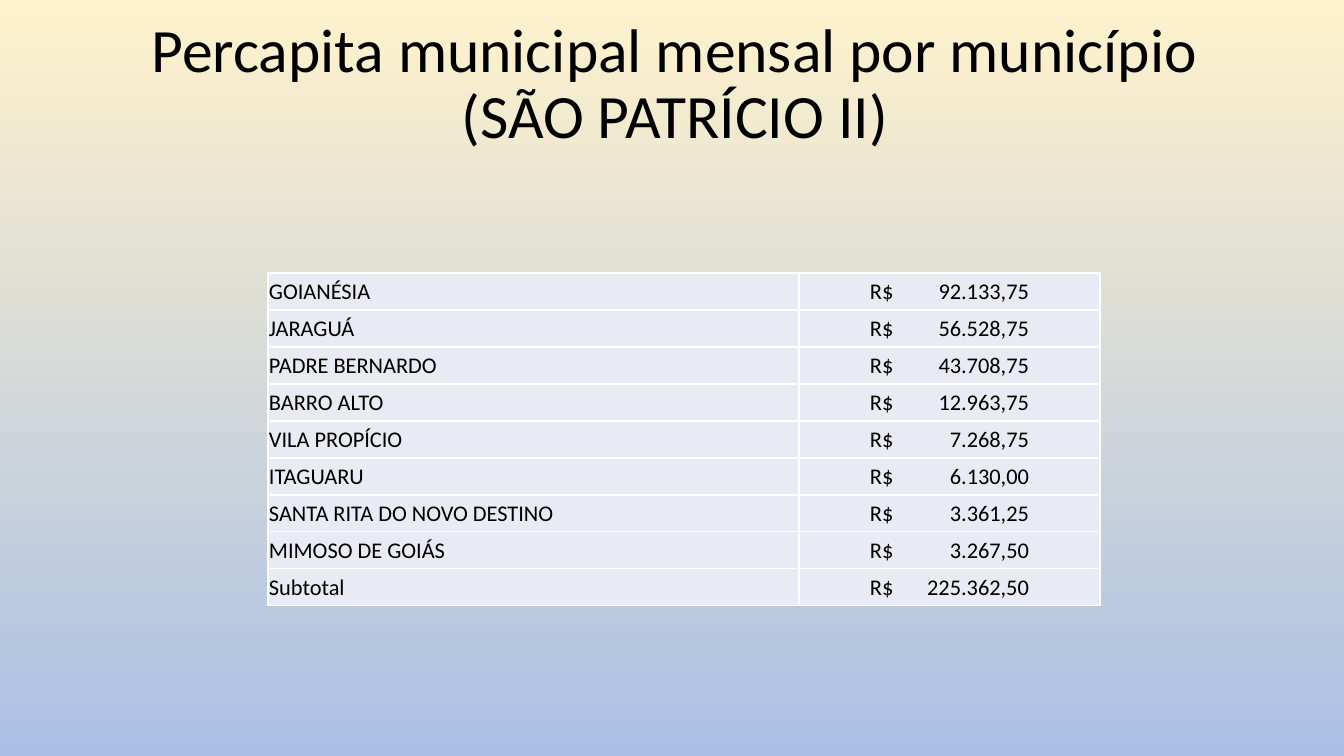
from lxml import etree
from pptx import Presentation
from pptx.dml.color import RGBColor
from pptx.enum.text import MSO_ANCHOR, PP_ALIGN
from pptx.oxml.ns import qn
from pptx.util import Pt

EMU_PER_PX = 914400 / 100.8
MIDDLE, BOTTOM = MSO_ANCHOR.MIDDLE, MSO_ANCHOR.BOTTOM
LEFT, CENTER = PP_ALIGN.LEFT, PP_ALIGN.CENTER
BLACK = RGBColor(0x00, 0x00, 0x00)
WHITE = RGBColor(0xFF, 0xFF, 0xFF)
CREAM = RGBColor(0xFF, 0xF2, 0xCC)
BLUE = RGBColor(0xAB, 0xC0, 0xE4)
CELL = RGBColor(0xE8, 0xEB, 0xF4)

AMOUNTS = [
    ("GOIANÉSIA", "92.133,75"),
    ("JARAGUÁ", "56.528,75"),
    ("PADRE BERNARDO", "43.708,75"),
    ("BARRO ALTO", "12.963,75"),
    ("VILA PROPÍCIO", "7.268,75"),
    ("ITAGUARU", "6.130,00"),
    ("SANTA RITA DO NOVO DESTINO", "3.361,25"),
    ("MIMOSO DE GOIÁS", "3.267,50"),
    ("Subtotal", "225.362,50"),
]


def px(n):
    return round(n * EMU_PER_PX)


class Deck:
    font = "Calibri"
    title_size = 44
    cell_size = 16
    border = 0.96

    def __init__(self, width, height):
        self.prs = Presentation()
        self.prs.slide_width, self.prs.slide_height = px(width), px(height)
        self.s = self.prs.slides.add_slide(self.prs.slide_layouts[6])

    def background(self, top, bottom):
        fill = self.s.background.fill
        fill.gradient()
        fill.gradient_angle = 270
        for stop, color in zip(fill.gradient_stops, (top, bottom)):
            stop.color.rgb = color

    def run(self, p, text, size):
        r = p.add_run()
        r.text = text
        r.font.name, r.font.size = self.font, Pt(size)
        r.font.color.rgb = BLACK

    def title(self, x, y, w, h, text):
        tf = self.s.shapes.add_textbox(px(x), px(y), px(w), px(h)).text_frame
        tf.word_wrap = True
        tf.vertical_anchor = MIDDLE
        p = tf.paragraphs[0]
        p.alignment, p.line_spacing = CENTER, 0.9
        self.run(p, text, self.title_size)

    def cell(self, cell, text, anchor, indent, tab=None):
        cell.fill.solid()
        cell.fill.fore_color.rgb = CELL
        cell.vertical_anchor = anchor
        cell.margin_left, cell.margin_right = px(indent), px(1)
        cell.margin_top = cell.margin_bottom = px(5)
        p = cell.text_frame.paragraphs[0]
        p.alignment = LEFT
        self.run(p, text, self.cell_size)
        if tab:
            tabs = etree.SubElement(p._p.get_or_add_pPr(), qn("a:tabLst"))
            etree.SubElement(tabs, qn("a:tab"), pos=str(px(tab)), algn="r")
        tcPr = cell._tc.get_or_add_tcPr()
        for i, side in enumerate(("lnL", "lnR", "lnT", "lnB")):
            ln = etree.Element(qn("a:" + side), w=str(Pt(self.border)))
            fill = etree.SubElement(ln, qn("a:solidFill"))
            etree.SubElement(fill, qn("a:srgbClr"), val=str(WHITE))
            tcPr.insert(i, ln)

    def table(self, x, y, widths, row_height, rows):
        sp = self.s.shapes.add_table(len(rows), len(widths), px(x), px(y),
                                     px(sum(widths)), px(row_height * len(rows)))
        table = sp.table
        table.first_row = table.horz_banding = False
        for column, width in zip(table.columns, widths):
            column.width = px(width)
        for i, (name, amount) in enumerate(rows):
            self.cell(table.cell(i, 0), name, MIDDLE, 1)
            self.cell(table.cell(i, 1), f"R$\t{amount}", BOTTOM, 71, 159)


def main():
    deck = Deck(1344, 756)
    deck.background(CREAM, BLUE)
    deck.title(107, 8, 1136, 155,
               "Percapita municipal mensal por município (SÃO PATRÍCIO II)")
    deck.table(268, 273, (531, 301), 37, AMOUNTS)
    deck.prs.save("out.pptx")


if __name__ == "__main__":
    main()
